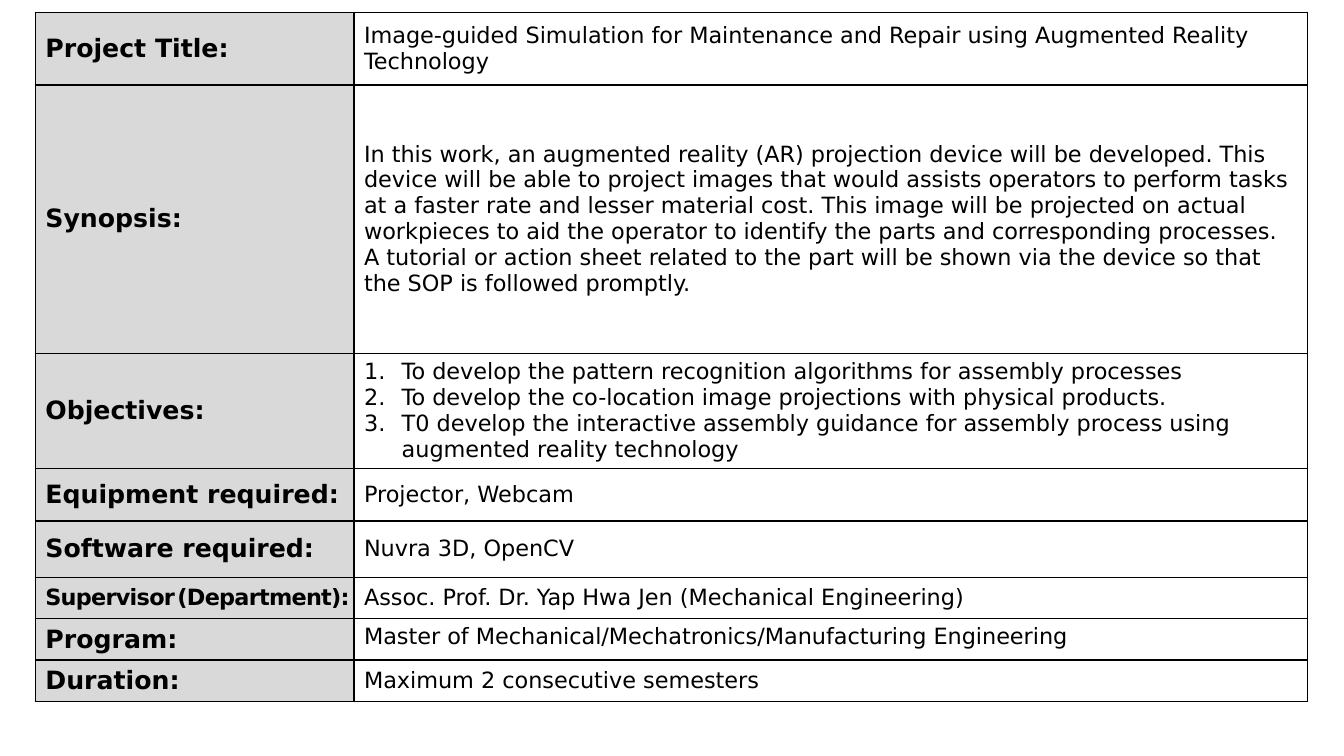
from dataclasses import dataclass

from pptx import Presentation
from pptx.dml.color import RGBColor
from pptx.enum.text import MSO_ANCHOR
from pptx.oxml.ns import qn
from pptx.util import Cm, Pt
from lxml.etree import SubElement

FONT = "DejaVu Sans"
BLACK = RGBColor(0x00, 0x00, 0x00)
WHITE = RGBColor(0xFF, 0xFF, 0xFF)
GREY = RGBColor(0xD9, 0xD9, 0xD9)
LABEL_SIZE = 18
BODY_SIZE = 16
COLUMN_WIDTHS = (8.03, 24.03)
LIST_INDENT = Cm(0.95)


@dataclass(frozen=True)
class Span:
    text: str
    size: int
    bold: bool = False
    spacing: int = 0


@dataclass(frozen=True)
class ProjectRow:
    height: float
    label: tuple[Span, ...]
    body: tuple[str, ...]
    numbered: bool = False
    tight_label: bool = False
    body_anchor: MSO_ANCHOR = MSO_ANCHOR.MIDDLE


def label(text: str) -> tuple[Span, ...]:
    return (Span(text, LABEL_SIZE, bold=True),)


ROWS = (
    ProjectRow(1.83, label("Project Title:"), (
        "Image-guided Simulation for Maintenance and Repair using Augmented Reality Technology",)),
    ProjectRow(6.76, label("Synopsis:"), (
        "In this work, an augmented reality (AR) projection device will be developed. "
        "This device will be able to project images that would assists operators to perform "
        "tasks at a faster rate and lesser material cost. This image will be projected on "
        "actual workpieces to aid the operator to identify the parts and corresponding "
        "processes. A tutorial or action sheet related to the part will be shown via the "
        "device so that the SOP is followed promptly.",)),
    ProjectRow(2.9, label("Objectives:"), (
        "To develop the pattern recognition algorithms for assembly processes",
        "To develop the co-location image projections with physical products.",
        "T0 develop the interactive assembly guidance for assembly process using "
        "augmented reality technology"), numbered=True),
    ProjectRow(1.33, label("Equipment required:"), ("Projector, Webcam",)),
    ProjectRow(1.42, label("Software required:"), ("Nuvra 3D, OpenCV",)),
    ProjectRow(1.04, (
        Span("Supervisor", BODY_SIZE, True, -50),
        Span(" ", 5, True, -50),
        Span("(Department):", BODY_SIZE, True, -50)),
        ("Assoc. Prof. Dr. Yap Hwa Jen (Mechanical Engineering)",), tight_label=True),
    ProjectRow(1.04, label("Program:"), (
        "Master of Mechanical/Mechatronics/Manufacturing Engineering",),
        body_anchor=MSO_ANCHOR.TOP),
    ProjectRow(1.04, label("Duration:"), ("Maximum 2 consecutive semesters",)),
)


def format_cell(cell, color: RGBColor, anchor: MSO_ANCHOR) -> None:
    cell.vertical_anchor = anchor
    tcPr = cell._tc.get_or_add_tcPr()
    for side in ("a:lnL", "a:lnR", "a:lnT", "a:lnB"):
        ln = SubElement(tcPr, qn(side), w=str(Pt(1)))
        fill = SubElement(ln, qn("a:solidFill"))
        SubElement(fill, qn("a:srgbClr"), val=str(BLACK))
    cell.fill.solid()
    cell.fill.fore_color.rgb = color


def add_span(p, span: Span) -> None:
    r = p.add_run()
    r.text = span.text
    r.font.name = FONT
    r.font.size = Pt(span.size)
    r.font.bold = span.bold
    r.font.color.rgb = BLACK
    if span.spacing:
        r._r.get_or_add_rPr().set("spc", str(span.spacing))


def number(p) -> None:
    pPr = p._p.get_or_add_pPr()
    pPr.set("marL", str(LIST_INDENT))
    pPr.set("indent", str(-LIST_INDENT))
    SubElement(pPr, qn("a:buFont"), typeface="+mj-lt")
    SubElement(pPr, qn("a:buAutoNum"), type="arabicPeriod")


def fill_row(label_cell, body_cell, row: ProjectRow) -> None:
    format_cell(label_cell, GREY, MSO_ANCHOR.MIDDLE)
    if row.tight_label:
        label_cell.margin_right = 0
    for span in row.label:
        add_span(label_cell.text_frame.paragraphs[0], span)

    format_cell(body_cell, WHITE, row.body_anchor)
    tf = body_cell.text_frame
    for i, text in enumerate(row.body):
        p = tf.add_paragraph() if i else tf.paragraphs[0]
        if row.numbered:
            number(p)
        add_span(p, Span(text, BODY_SIZE))


def main() -> None:
    prs = Presentation()
    prs.slide_width, prs.slide_height = Cm(33.87), Cm(19.05)
    s = prs.slides.add_slide(prs.slide_layouts[6])
    height = sum(row.height for row in ROWS)
    table = s.shapes.add_table(len(ROWS), len(COLUMN_WIDTHS), Cm(0.89), Cm(0.31),
                               Cm(sum(COLUMN_WIDTHS)), Cm(height)).table
    table.first_row = False
    table.horz_banding = False
    for column, width in zip(table.columns, COLUMN_WIDTHS):
        column.width = Cm(width)
    for i, row in enumerate(ROWS):
        table.rows[i].height = Cm(row.height)
        fill_row(table.cell(i, 0), table.cell(i, 1), row)
    prs.save("out.pptx")


if __name__ == "__main__":
    main()
